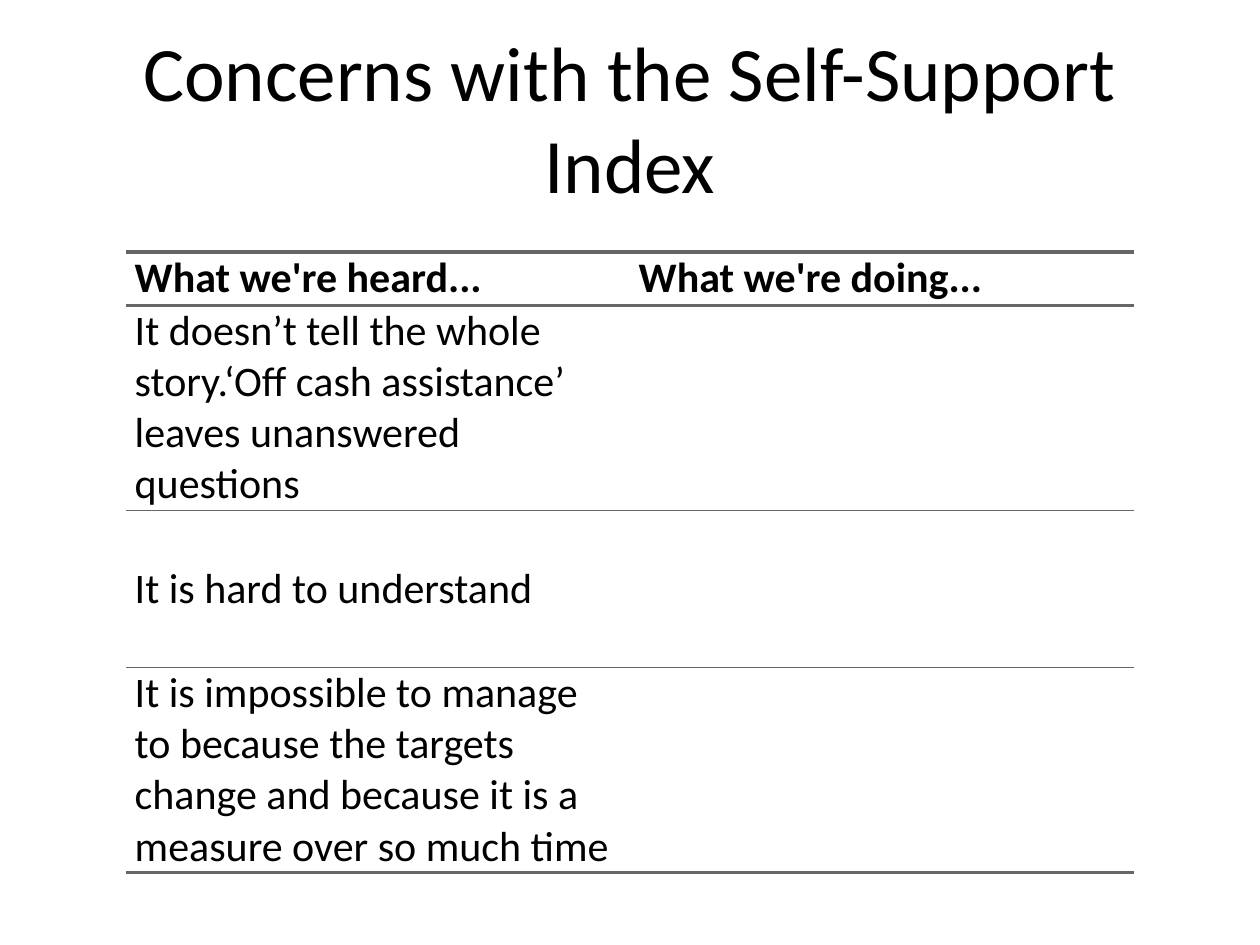
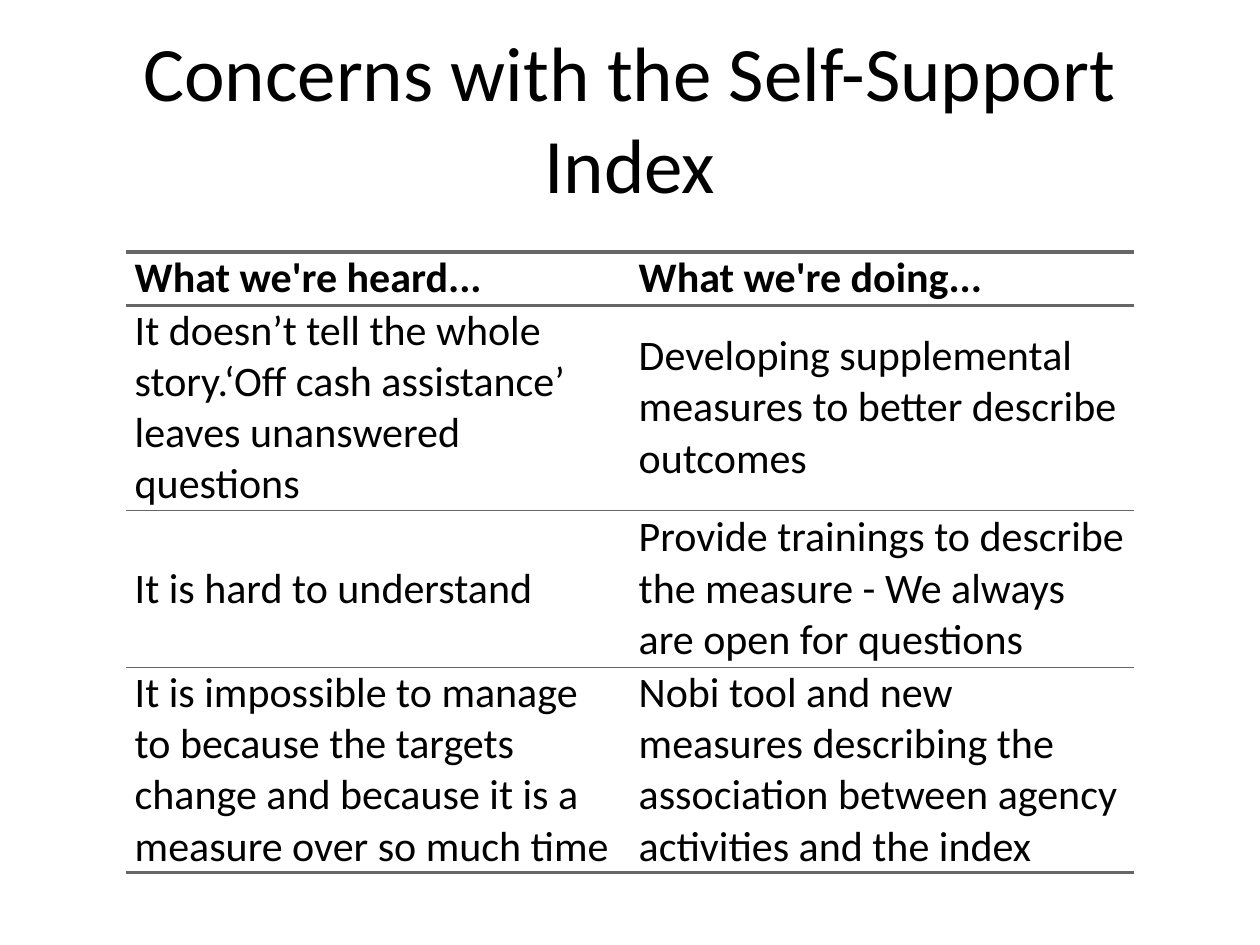
from dataclasses import dataclass

from lxml.etree import SubElement
from pptx import Presentation
from pptx.dml.color import RGBColor
from pptx.enum.text import MSO_ANCHOR, PP_ALIGN
from pptx.oxml.ns import qn
from pptx.util import Pt


@dataclass(frozen=True)
class Theme:
    font: str = "Calibri"
    ink: str = "000000"
    rule: str = "666666"
    title_size: float = 44
    body_size: float = 24
    thick: float = 2
    thin: float = 0.5
    cell_left: float = 5
    cell_right: float = 5.5


THEME = Theme()

# Content
TITLE = "Concerns with the Self-Support Index"
HEADINGS = ("What we're heard...", "What we're doing...")
CONCERNS = (
    "It doesn’t tell the whole story.‘Off cash assistance’ leaves unanswered questions",
    "It is hard to understand",
    "It is impossible to manage to because the targets change "
    "and because it is a measure over so much time",
)
ACTIONS = (
    "Developing supplemental measures to better describe outcomes",
    "Provide trainings to describe the measure - We always are open for questions",
    "Nobi tool and new measures describing the association "
    "between agency activities and the index",
)
NO_ACTIONS = ("",) * len(CONCERNS)

# Table geometry in points
TABLE_LEFT, TABLE_TOP, COLUMN_WIDTH = 72, 144, 288
ROW_HEIGHTS = (30.5, 117, 90, 117)


def add_span(para, text, size, bold=False):
    span = para.add_run()
    span.text = text
    span.font.name = THEME.font
    span.font.size = Pt(size)
    span.font.bold = bold
    span.font.color.rgb = RGBColor.from_string(THEME.ink)


def add_title(page, text):
    box = page.shapes.add_textbox(Pt(36), Pt(21.6), Pt(648), Pt(90))
    frame = box.text_frame
    frame.word_wrap = True
    frame.vertical_anchor = MSO_ANCHOR.MIDDLE
    para = frame.paragraphs[0]
    para.alignment = PP_ALIGN.CENTER
    add_span(para, text, THEME.title_size)


def set_borders(cell, top, bottom):
    """Rule a cell above and below, leaving its sides open."""
    properties = cell._tc.get_or_add_tcPr()
    for side, width in (("L", 0), ("R", 0), ("T", top), ("B", bottom)):
        line = SubElement(properties, qn(f"a:ln{side}"), w=str(Pt(width)))
        if width:
            fill = SubElement(line, qn("a:solidFill"))
            SubElement(fill, qn("a:srgbClr"), val=THEME.rule)
        else:
            SubElement(line, qn("a:noFill"))


def fill_cell(cell, text, bold):
    cell.fill.background()
    cell.vertical_anchor = MSO_ANCHOR.MIDDLE
    cell.margin_left = Pt(THEME.cell_left)
    cell.margin_right = Pt(THEME.cell_right)
    cell.margin_top = cell.margin_bottom = 0
    if text:
        add_span(cell.text_frame.paragraphs[0], text, THEME.body_size, bold)


def add_concerns_table(page, actions):
    rows = (HEADINGS, *zip(CONCERNS, actions))
    table = page.shapes.add_table(
        len(rows), len(HEADINGS), Pt(TABLE_LEFT), Pt(TABLE_TOP),
        Pt(COLUMN_WIDTH * len(HEADINGS)), Pt(sum(ROW_HEIGHTS)),
    ).table
    table.first_row = table.horz_banding = False
    for column in table.columns:
        column.width = Pt(COLUMN_WIDTH)

    # Thick rules frame the heading and close the table
    rules = [THEME.thick] * 2 + [THEME.thin] * (len(rows) - 2) + [THEME.thick]
    for index, texts in enumerate(rows):
        table.rows[index].height = Pt(ROW_HEIGHTS[index])
        for cell, text in zip(table.rows[index].cells, texts):
            set_borders(cell, rules[index], rules[index + 1])
            fill_cell(cell, text, bold=index == 0)


def main():
    deck = Presentation()
    deck.slide_width, deck.slide_height = Pt(720), Pt(540)
    blank = deck.slide_layouts[6]

    # Concerns alone, then concerns with their answers
    for actions in (NO_ACTIONS, ACTIONS):
        page = deck.slides.add_slide(blank)
        add_title(page, TITLE)
        add_concerns_table(page, actions)

    deck.save("out.pptx")


if __name__ == "__main__":
    main()
